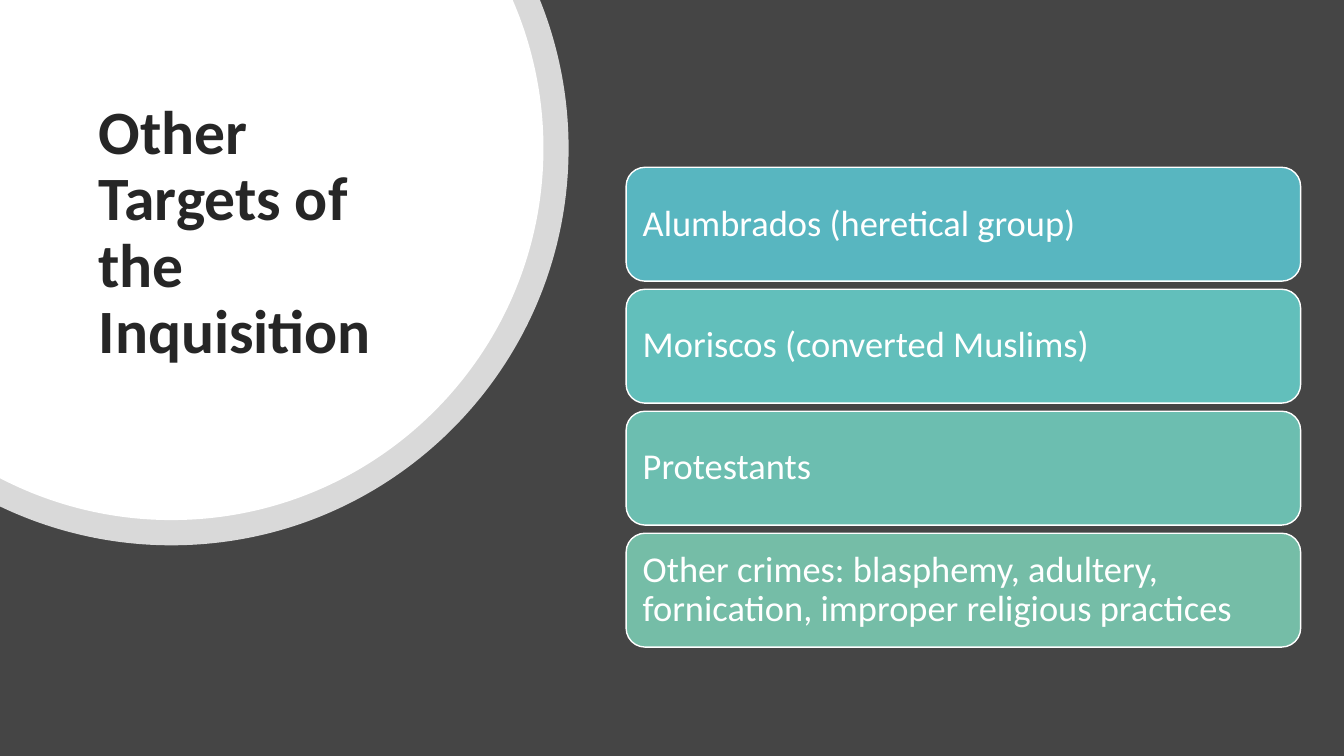
"""Build a slide that lists other targets of the Inquisition."""
from itertools import pairwise
from math import acos, asin, cos, pi, sin, tan

from lxml.etree import SubElement
from pptx import Presentation
from pptx.dml.color import RGBColor
from pptx.enum.shapes import MSO_SHAPE
from pptx.enum.text import MSO_ANCHOR, PP_ALIGN
from pptx.oxml.ns import qn
from pptx.util import Pt

TITLE = "Other Targets of the Inquisition"
CARDS = [
    ("Alumbrados (heretical group)", "58B6C0"),
    ("Moriscos (converted Muslims)", "62BFBB"),
    ("Protestants", "6CBEB0"),
    ("Other crimes: blasphemy, adultery, fornication, improper religious practices", "75BDA7"),
]


class Theme:
    """Colours, font and type sizes."""
    back, ink, white = "454545", "262626", "FFFFFF"
    font, title, body = "Calibri", 44, 26


PX = 9144
SIZE = (1333, 750)
MID = (170, 147)
DISCS = [(394, 80), (369, 100)]
TITLE_BOX = (88, 66, 352, 332)
LEFT, TOP, WIDE, HIGH, PITCH = 621, 166, 669, 113, 121
INSET = 11


def px(*nums):
    """Turn px into EMU."""
    return [round(n * PX) for n in nums]


def paint(fill, color):
    """Set a solid fill."""
    fill.solid()
    fill.fore_color.rgb = RGBColor.from_string(color)


def write(frame, text, size, color, after, bold=False):
    """Put one left-aligned paragraph in a frame."""
    frame.word_wrap = True
    frame.vertical_anchor = MSO_ANCHOR.MIDDLE
    para = frame.paragraphs[0]
    para.text = text
    para.alignment = PP_ALIGN.LEFT
    para.line_spacing = 0.9
    para.space_after = Pt(after)
    font = para.font
    font.name, font.size, font.bold = Theme.font, Pt(size), bold
    font.color.rgb = RGBColor.from_string(color)


def on_rim(radius, turn, lean=0):
    """Find a rim point, moved along its tangent by lean radii."""
    return px(MID[0] + radius * (cos(turn) - lean * sin(turn)),
              MID[1] + radius * (sin(turn) + lean * cos(turn)))


def bend(line, radius, start, end):
    """Swap a straight segment for a curve along the rim."""
    lean = 4 / 3 * tan((end - start) / 4)
    curve = line.makeelement(qn("a:cubicBezTo"))
    for turn, shift in ((start, lean), (end, -lean), (end, 0)):
        x, y = on_rim(radius, turn, shift)
        SubElement(curve, qn("a:pt"), x=str(x), y=str(y))
    line.getparent().replace(line, curve)


def add_disc(slide, radius, alpha):
    """Draw a disc cut off by the top and left slide edges."""
    turns = [-asin(MID[1] / radius), 0, pi / 2, acos(-MID[0] / radius)]
    pen = slide.shapes.build_freeform(0, 0)
    pen.add_line_segments([on_rim(radius, t) for t in turns], close=True)
    disc = pen.convert_to_shape()
    lines = list(disc.element.iter(qn("a:lnTo")))[1:len(turns)]
    for line, (start, end) in zip(lines, pairwise(turns)):
        bend(line, radius, start, end)
    disc.shadow.inherit = False
    disc.line.fill.background()
    paint(disc.fill, Theme.white)
    if alpha < 100:
        color = next(disc.element.spPr.iter(qn("a:srgbClr")))
        SubElement(color, qn("a:alpha"), val=str(alpha * 1000))


def add_card(slide, row, text, color):
    """Draw one rounded card in the list."""
    box = px(LEFT, TOP + row * PITCH, WIDE, HIGH)
    card = slide.shapes.add_shape(MSO_SHAPE.ROUNDED_RECTANGLE, *box)
    card.shadow.inherit = False
    paint(card.fill, color)
    paint(card.line.fill, Theme.white)
    card.line.width = Pt(1)
    frame = card.text_frame
    frame.margin_left = frame.margin_right = INSET * PX
    frame.margin_top = frame.margin_bottom = INSET * PX
    write(frame, text, Theme.body, Theme.white, 9)


def main():
    """Make and save the deck."""
    deck = Presentation()
    deck.slide_width, deck.slide_height = px(*SIZE)
    slide = deck.slides.add_slide(deck.slide_layouts[6])
    paint(slide.background.fill, Theme.back)
    for radius, alpha in DISCS:
        add_disc(slide, radius, alpha)
    title = slide.shapes.add_textbox(*px(*TITLE_BOX))
    write(title.text_frame, TITLE, Theme.title, Theme.ink, 6, True)
    for row, (text, color) in enumerate(CARDS):
        add_card(slide, row, text, color)
    deck.save("out.pptx")


if __name__ == "__main__":
    main()
